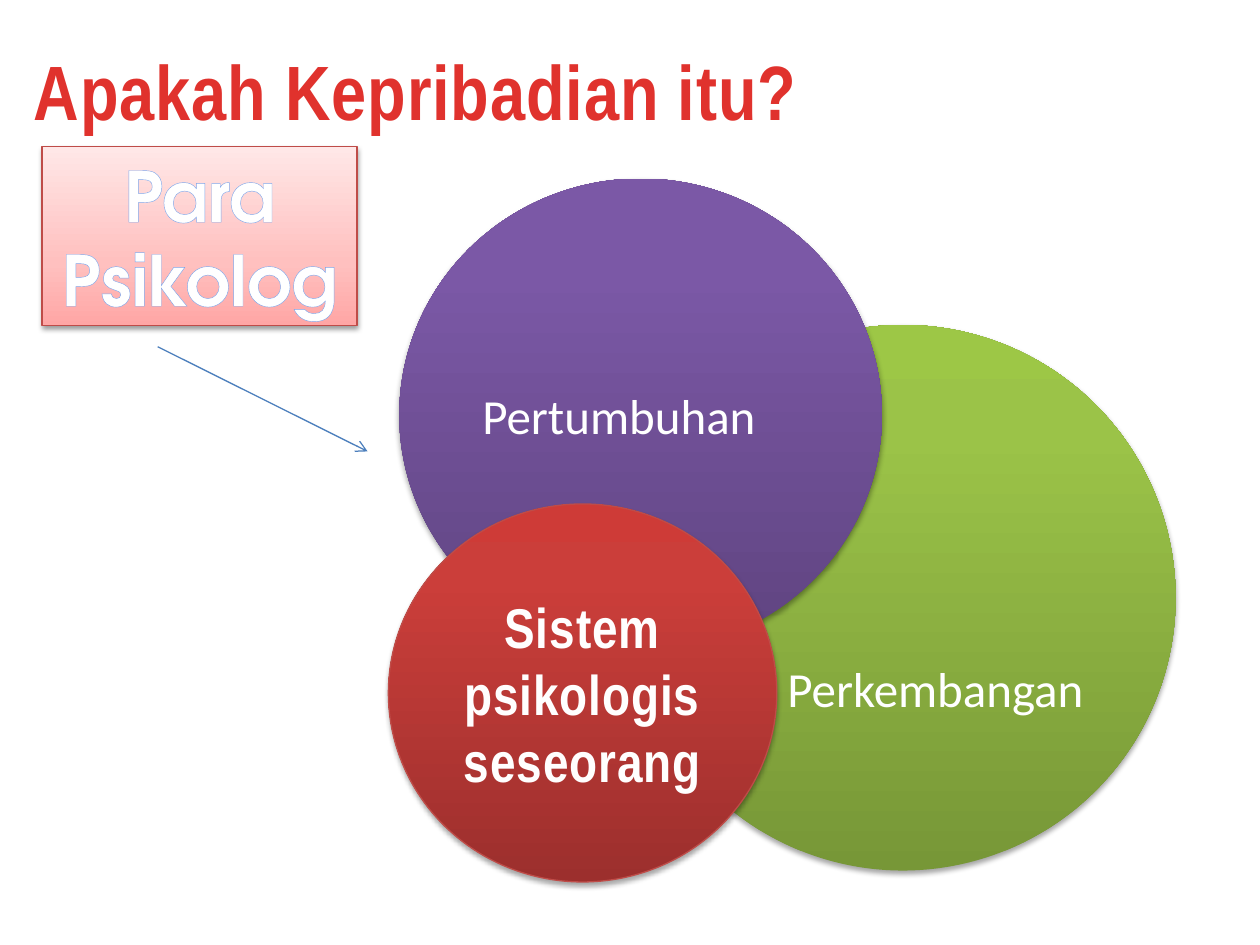
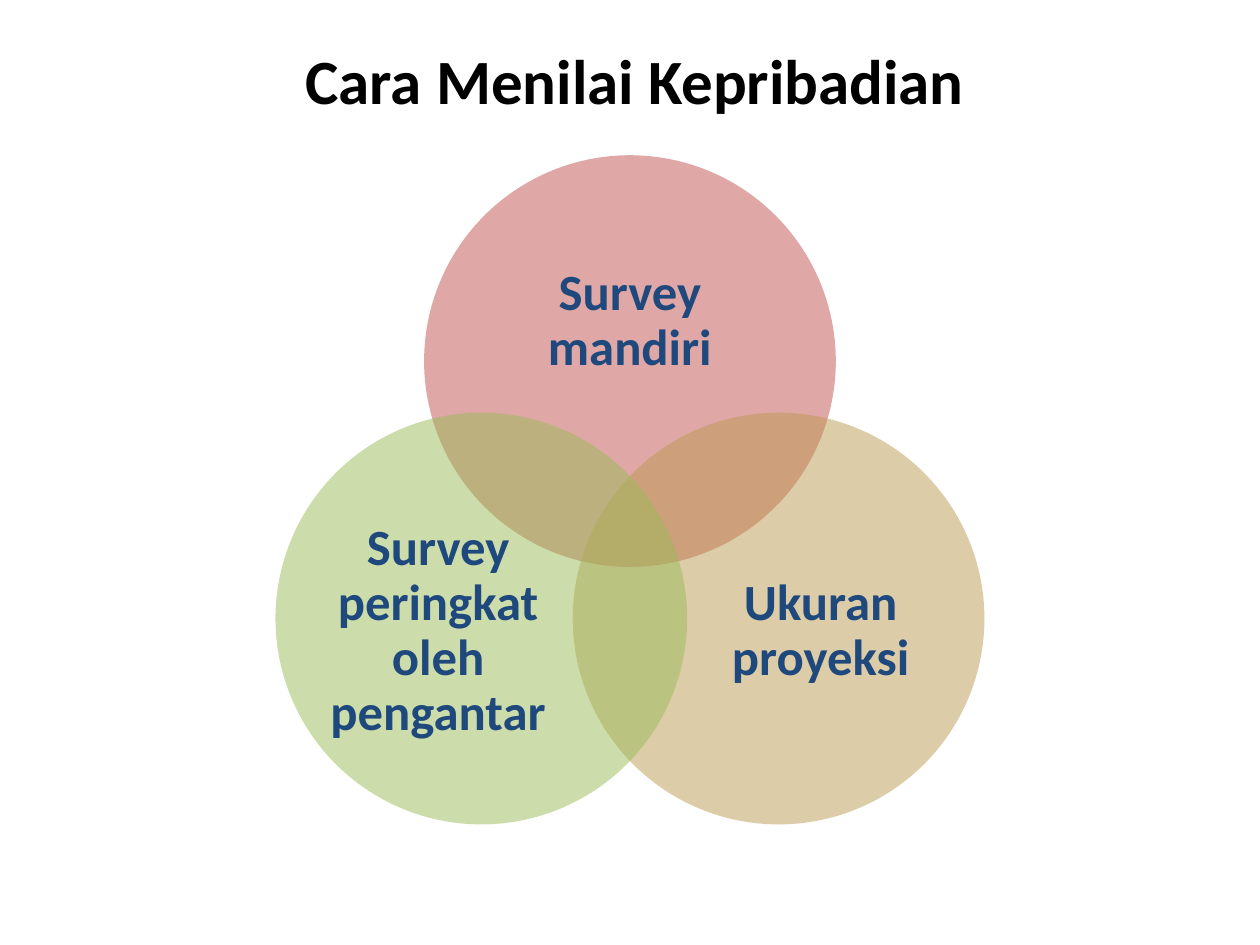
import math
from copy import deepcopy
from dataclasses import dataclass
from typing import Optional

from lxml import etree
from pptx import Presentation
from pptx.dml.color import RGBColor
from pptx.enum import shapes, text
from pptx.oxml.ns import qn
from pptx.util import Cm, Pt

WHITE = RGBColor(0xFF, 0xFF, 0xFF)
OFF_WHITE = RGBColor(0xFF, 0xFE, 0xFE)
BLACK = RGBColor(0, 0, 0)
TITLE_RED = RGBColor(0xE0, 0x32, 0x2D)
EDGE_RED = RGBColor(0xBF, 0x4C, 0x48)
ARROW_BLUE = RGBColor(0x4B, 0x7E, 0xBC)
LABEL_BLUE = RGBColor(0x1F, 0x49, 0x7D)
OUTLINE_BLUE = RGBColor(0x7E, 0xA6, 0xEA)
OUTLINE_ORANGE = RGBColor(0xE7, 0x87, 0x38)
ROSE = RGBColor(0xC0, 0x50, 0x4D)
SAND = RGBColor(0xBD, 0x9B, 0x53)
LIME = RGBColor(0x9B, 0xBB, 0x59)

GREEN_FADE = ((0, RGBColor(0x77, 0x97, 0x37)), (0.8, RGBColor(0x9B, 0xC3, 0x48)),
              (1, RGBColor(0x9D, 0xC7, 0x46)))
PURPLE_FADE = ((0, RGBColor(0x5F, 0x44, 0x80)), (0.8, RGBColor(0x7B, 0x58, 0xA6)),
               (1, RGBColor(0x7C, 0x57, 0xA8)))
RED_FADE = ((0, RGBColor(0x9C, 0x2F, 0x2D)), (0.8, RGBColor(0xCB, 0x3E, 0x3A)),
            (1, RGBColor(0xCE, 0x3B, 0x37)))
PINK_FADE = ((0, RGBColor(0xFF, 0xA6, 0xA5)), (0.35, RGBColor(0xFF, 0xC0, 0xBF)),
             (1, RGBColor(0xFF, 0xE7, 0xE7)))

OVAL = shapes.MSO_SHAPE.OVAL
RECTANGLE = shapes.MSO_SHAPE.RECTANGLE
LEFT, CENTER, RIGHT = text.PP_ALIGN.LEFT, text.PP_ALIGN.CENTER, text.PP_ALIGN.RIGHT

VENN_CENTER = (12.7, 10.74)
VENN_SPREAD = 3.46
VENN_DIAMETER = 8.3


@dataclass(frozen=True)
class Style:
    font: str
    size: float
    color: RGBColor
    bold: bool = True
    spacing: float = 0
    outline: Optional[RGBColor] = None
    outline_width: float = 1


@dataclass(frozen=True)
class Panel:
    kind: shapes.MSO_SHAPE
    box: tuple
    fade: tuple
    words: str
    style: Style
    align: text.PP_ALIGN = CENTER
    edge: Optional[RGBColor] = None
    top_inset: float = 0.13
    shadow_alpha: int = 35


@dataclass(frozen=True)
class VennSet:
    """Label box is measured from the circle's top left corner."""
    angle: float
    color: RGBColor
    words: str
    label_box: tuple


CIRCLE_TEXT = Style("Calibri", 28, WHITE, bold=False)
VENN_TEXT = Style("Calibri", 29, LABEL_BLUE)

PANELS = (
    Panel(OVAL, (12.7, 6.55, 11, 11), GREEN_FADE, "Perkembangan", CIRCLE_TEXT,
          align=RIGHT, top_inset=3.75),
    Panel(OVAL, (8.05, 3.6, 9.73, 9.53), PURPLE_FADE, "Pertumbuhan", CIRCLE_TEXT,
          align=LEFT),
    Panel(OVAL, (7.83, 10.16, 7.83, 7.62), RED_FADE, "Sistem psikologis seseorang",
          Style("Arial Narrow", 32, OFF_WHITE, spacing=0.5, outline=OUTLINE_ORANGE),
          edge=EDGE_RED),
    Panel(RECTANGLE, (0.85, 2.96, 6.35, 3.6), PINK_FADE, "Para Psikolog",
          Style("TeX Gyre Adventor", 40, WHITE, outline=OUTLINE_BLUE,
                outline_width=2.48),
          edge=EDGE_RED, shadow_alpha=38),
)

VENN_SETS = (
    VennSet(-90, ROSE, "Survey mandiri", (1.1, 1.48, 6.1, 3.73)),
    VennSet(30, SAND, "Ukuran proyeksi", (2.51, 2.13, 4.98, 4.57)),
    VennSet(150, LIME, "Survey peringkat oleh pengantar", (0.79, 2.13, 4.98, 4.57)),
)


def lengths(box: tuple) -> list:
    return [Cm(value) for value in box]


def sub_element(parent, tag: str, **attributes):
    return etree.SubElement(parent, qn(tag), attributes)


def write(frame, words: str, style: Style, align: text.PP_ALIGN):
    frame.word_wrap = True
    frame.auto_size = text.MSO_AUTO_SIZE.NONE
    paragraph = frame.paragraphs[0]
    paragraph.alignment = align
    run = paragraph.add_run()
    run.text = words
    font = run.font
    font.name, font.size, font.bold = style.font, Pt(style.size), style.bold
    font.color.rgb = style.color
    properties = run._r.get_or_add_rPr()
    if style.spacing:
        properties.set("spc", str(round(style.spacing * 100)))
    if style.outline is not None:
        line = etree.Element(qn("a:ln"), w=str(Pt(style.outline_width)))
        sub_element(sub_element(line, "a:solidFill"), "a:srgbClr",
                    val=str(style.outline))
        properties.insert(0, line)
    return paragraph


def add_titled_slide(deck, words: str, box: tuple, style: Style, align: text.PP_ALIGN):
    slide = deck.slides.add_slide(deck.slide_layouts[5])
    title = slide.shapes.title
    title.left, title.top, title.width, title.height = lengths(box)
    title.text_frame.vertical_anchor = text.MSO_ANCHOR.TOP
    write(title.text_frame, words, style, align)
    return slide


def fade_upward(shape, stops: tuple) -> None:
    shape.fill.gradient()
    shape.fill.gradient_angle = 90
    stop_list = shape._element.spPr.find(qn("a:gradFill")).find(qn("a:gsLst"))
    while len(stop_list) < len(stops):
        stop_list.append(deepcopy(stop_list[0]))
    for stop, (position, color) in zip(shape.fill.gradient_stops, stops):
        stop.position = position
        stop.color.rgb = color


def drop_shadow(shape, alpha: int) -> None:
    shape.shadow.inherit = False
    effects = shape._element.spPr.find(qn("a:effectLst"))
    shadow = sub_element(effects, "a:outerShdw", blurRad=str(Pt(3.1)),
                         dist=str(Pt(1.8)), dir="5400000", rotWithShape="0")
    black = sub_element(shadow, "a:srgbClr", val=str(BLACK))
    sub_element(black, "a:alpha", val=str(alpha * 1000))


def add_panel(slide, panel: Panel) -> None:
    shape = slide.shapes.add_shape(panel.kind, *lengths(panel.box))
    fade_upward(shape, panel.fade)
    if panel.edge is None:
        shape.line.fill.background()
    else:
        shape.line.color.rgb = panel.edge
        shape.line.width = Pt(0.75)
    drop_shadow(shape, panel.shadow_alpha)
    frame = shape.text_frame
    frame.vertical_anchor = text.MSO_ANCHOR.MIDDLE
    frame.margin_top = Cm(panel.top_inset)
    write(frame, panel.words, panel.style, panel.align)


def add_arrow(slide, start: tuple, end: tuple) -> None:
    arrow = slide.shapes.add_connector(shapes.MSO_CONNECTOR.STRAIGHT,
                                       *lengths(start + end))
    arrow.line.color.rgb = ARROW_BLUE
    arrow.line.width = Pt(0.75)
    sub_element(arrow.line._get_or_add_ln(), "a:tailEnd", type="arrow")
    sub_element(arrow._element.spPr, "a:effectLst")


def add_venn_set(slide, venn_set: VennSet) -> None:
    angle = math.radians(venn_set.angle)
    left = VENN_CENTER[0] + VENN_SPREAD * math.cos(angle) - VENN_DIAMETER / 2
    top = VENN_CENTER[1] + VENN_SPREAD * math.sin(angle) - VENN_DIAMETER / 2
    circle = slide.shapes.add_shape(
        OVAL, *lengths((left, top, VENN_DIAMETER, VENN_DIAMETER)))
    circle.shadow.inherit = False
    circle.line.fill.background()
    circle.fill.solid()
    circle.fill.fore_color.rgb = venn_set.color
    fill = circle._element.spPr.find(qn("a:solidFill"))
    sub_element(fill[0], "a:alpha", val="50000")

    dx, dy, width, height = venn_set.label_box
    label = slide.shapes.add_textbox(*lengths((left + dx, top + dy, width, height)))
    frame = label.text_frame
    frame.margin_left = frame.margin_top = frame.margin_right = frame.margin_bottom = 0
    frame.vertical_anchor = text.MSO_ANCHOR.MIDDLE
    write(frame, venn_set.words, VENN_TEXT, CENTER).line_spacing = 0.9


def main() -> None:
    deck = Presentation()
    deck.slide_width, deck.slide_height = Cm(25.4), Cm(19.05)

    definition = add_titled_slide(
        deck, "Apakah Kepribadian itu?", (0.43, 0.75, 24.33, 2.1),
        Style("Arial Narrow", 44, TITLE_RED, spacing=0.5), LEFT)
    for panel in PANELS:
        add_panel(definition, panel)
    add_arrow(definition, (3.18, 6.99), (7.41, 9.1))

    assessment = add_titled_slide(
        deck, "Cara Menilai Kepribadian", (5.28, 0.7, 15.04, 2.4),
        Style("Calibri", 36, BLACK), CENTER)
    for venn_set in VENN_SETS:
        add_venn_set(assessment, venn_set)

    deck.save("out.pptx")


if __name__ == "__main__":
    main()
